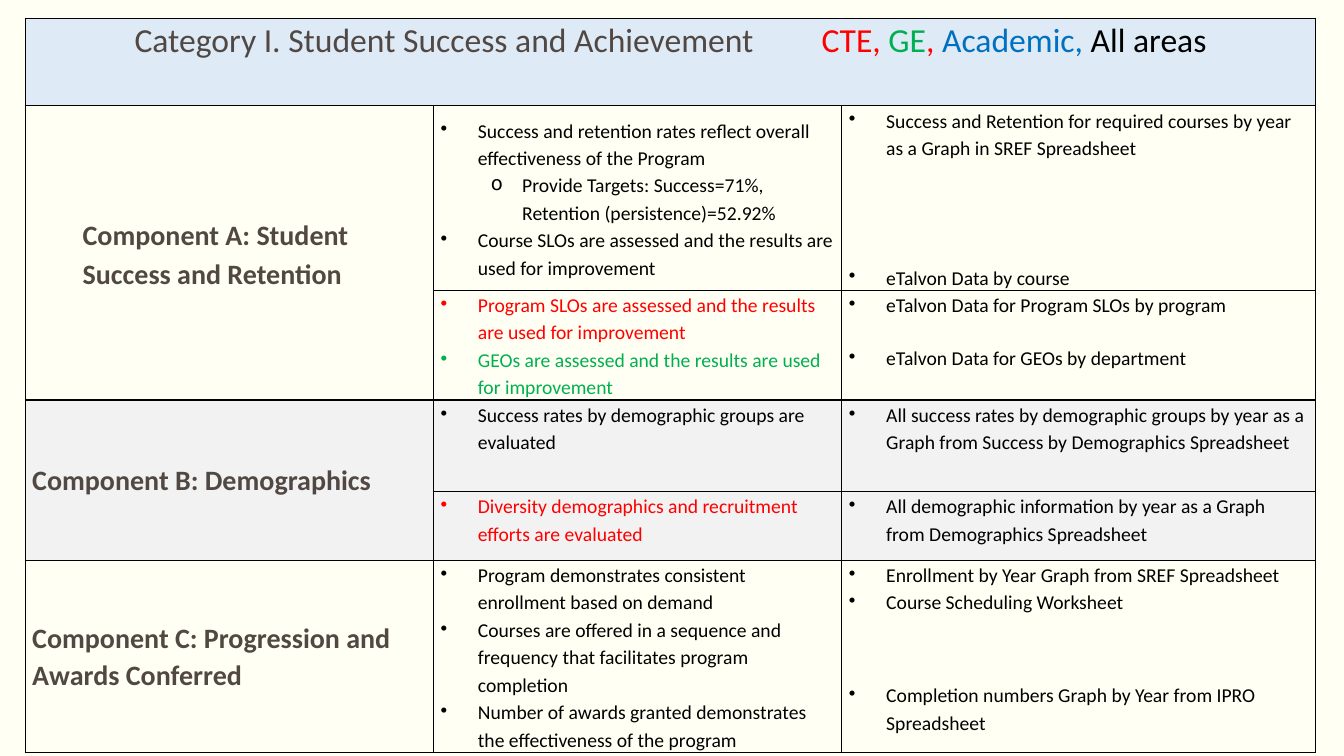
from dataclasses import dataclass

from lxml.etree import SubElement as Sub
from pptx import Presentation
from pptx.dml.color import RGBColor as RGB
from pptx.enum.text import MSO_ANCHOR as Anchor, PP_ALIGN as Align
from pptx.oxml.ns import qn
from pptx.util import Inches, Pt


@dataclass(frozen=True)
class Theme:
    font: str = "Calibri"
    title_size: int = 24
    head_size: int = 20
    body_size: int = 14
    page: str = "FFFFF3"
    title_fill: str = "DEEAF6"
    band_fill: str = "F2F2F2"
    brown: str = "514843"
    black: str = "000000"
    red: str = "FF0000"
    green: str = "00B050"
    blue: str = "0070C0"


T = Theme()


def add_text(p, text, size=T.body_size, color=T.black, bold=False, tracking=0):
    """Add one formatted run; tracking is extra letter spacing in points."""
    r = p.add_run()
    r.text = text
    f = r.font
    f.name, f.size, f.bold = T.font, Pt(size), bold
    f.color.rgb = RGB.from_string(color)
    if tracking:
        r._r.get_or_add_rPr().set("spc", str(tracking * 100))


@dataclass
class Item:
    text: str
    color: str = T.black
    before: float = 0
    sub: bool = False


class SlideBuilder:
    def __init__(self, prs, theme):
        self.theme = theme
        self.s = prs.slides.add_slide(prs.slide_layouts[6])
        bg = self.s.background.fill
        bg.solid()
        bg.fore_color.rgb = RGB.from_string(theme.page)

    def table(self, left, top, cols, rows):
        frame = self.s.shapes.add_table(
            len(rows), len(cols), Inches(left), Inches(top),
            Inches(sum(cols)), Inches(sum(rows)))
        tbl = frame.table
        tbl.first_row = tbl.horz_banding = False
        for col, width in zip(tbl.columns, cols):
            col.width = Inches(width)
        for row, height in zip(tbl.rows, rows):
            row.height = Inches(height)
        for cell in tbl.iter_cells():
            self.border(cell)
            cell.fill.background()
            cell.margin_left = cell.margin_right = Inches(0.07)
            cell.margin_top = cell.margin_bottom = 0
        return tbl

    def border(self, cell):
        tc_pr = cell._tc.get_or_add_tcPr()
        for side in ("a:lnL", "a:lnR", "a:lnT", "a:lnB"):
            ln = Sub(tc_pr, qn(side), w=str(Pt(1)))
            Sub(Sub(ln, qn("a:solidFill")), qn("a:srgbClr"), val=self.theme.black)

    def fill(self, cell, color):
        cell.fill.solid()
        cell.fill.fore_color.rgb = RGB.from_string(color)

    def title(self, cell, parts):
        p = cell.text_frame.paragraphs[0]
        p.alignment, p.line_spacing = Align.CENTER, 1.07
        for text, color, tracking in parts:
            add_text(p, text, size=self.theme.title_size, color=color,
                     tracking=tracking)

    def heading(self, cell, text, indent=0, spacing=1.07):
        cell.vertical_anchor = Anchor.MIDDLE
        p = cell.text_frame.paragraphs[0]
        p.line_spacing = spacing
        p._p.get_or_add_pPr().set("marL", str(Inches(indent)))
        add_text(p, text, size=self.theme.head_size, color=self.theme.brown, bold=True)

    def bullets(self, cell, items, anchor=Anchor.TOP):
        cell.vertical_anchor = anchor
        tf = cell.text_frame
        for i, item in enumerate(items):
            p = tf.add_paragraph() if i else tf.paragraphs[0]
            p.line_spacing = 1.15
            p.level = int(item.sub)
            if item.before:
                p.space_before = Pt(item.before)
            margin, hang, mark = (0.81, 0.31, "o") if item.sub else (0.37, 0.37, "•")
            p_pr = p._p.get_or_add_pPr()
            p_pr.set("marL", str(Inches(margin)))
            p_pr.set("indent", str(-Inches(hang)))
            Sub(p_pr, qn("a:buChar"), char=mark)
            add_text(p, item.text, color=item.color)


TITLE = [
    ("Category I. Student Success and Achievement", T.brown, 0),
    (" ", T.brown, 43),
    ("CTE, ", T.red, 0),
    ("GE", T.green, 0),
    (", ", T.red, 0),
    ("Academic, ", T.blue, 0),
    ("All areas", T.black, 0),
]

# First row, last row, text and format of each component
COMPONENTS = [
    (1, 2, "Component A: Student Success and Retention", dict(indent=0.5, spacing=1.15)),
    (3, 4, "Component B: Demographics", {}),
    (5, 5, "Component C: Progression and Awards Conferred", {}),
]

# Criteria, their anchor, and the evidence for them, row by row
ROWS = [
    ([Item("Success and retention rates reflect overall effectiveness of the Program"),
      Item("Provide Targets: Success=71%, Retention (persistence)=52.92%", sub=True),
      Item("Course SLOs are assessed and the results are used for improvement")],
     Anchor.MIDDLE,
     [Item("Success and Retention for required courses by year as a Graph in SREF Spreadsheet"),
      Item("eTalvon Data by course", before=73)]),
    ([Item("Program SLOs are assessed and the results are used for improvement", T.red),
      Item("GEOs are assessed and the results are used for improvement", T.green)],
     Anchor.TOP,
     [Item("eTalvon Data for Program SLOs by program"),
      Item("eTalvon Data for GEOs by department", before=18.3)]),
    ([Item("Success rates by demographic groups are evaluated")],
     Anchor.TOP,
     [Item("All success rates by demographic groups by year as a Graph from "
           "Success by Demographics Spreadsheet")]),
    ([Item("Diversity demographics and recruitment efforts are evaluated", T.red)],
     Anchor.TOP,
     [Item("All demographic information by year as a Graph from Demographics Spreadsheet")]),
    ([Item("Program demonstrates consistent enrollment based on demand"),
      Item("Courses are offered in a sequence and frequency that facilitates program completion"),
      Item("Number of awards granted demonstrates the effectiveness of the program")],
     Anchor.MIDDLE,
     [Item("Enrollment by Year Graph from SREF Spreadsheet"),
      Item("Course Scheduling Worksheet"),
      Item("Completion numbers Graph by Year from IPRO Spreadsheet", before=46.6)]),
]


def main():
    prs = Presentation()
    prs.slide_width, prs.slide_height = Inches(13.33), Inches(7.5)
    b = SlideBuilder(prs, T)
    tbl = b.table(0.25, 0.18, cols=[4.05, 4.05, 4.7],
                  rows=[0.87, 1.81, 1.06, 0.91, 0.68, 1.79])

    # Title band
    tbl.cell(0, 0).merge(tbl.cell(0, 2))
    b.fill(tbl.cell(0, 0), T.title_fill)
    b.title(tbl.cell(0, 0), TITLE)

    # Component names
    for first, last, name, style in COMPONENTS:
        if last > first:
            tbl.cell(first, 0).merge(tbl.cell(last, 0))
        b.heading(tbl.cell(first, 0), name, **style)

    # Grey band behind Component B
    for row in (3, 4):
        for col in range(3):
            b.fill(tbl.cell(row, col), T.band_fill)

    # Criteria and evidence
    for row, (criteria, anchor, evidence) in enumerate(ROWS, start=1):
        b.bullets(tbl.cell(row, 1), criteria, anchor)
        b.bullets(tbl.cell(row, 2), evidence)

    prs.save("out.pptx")


if __name__ == "__main__":
    main()
